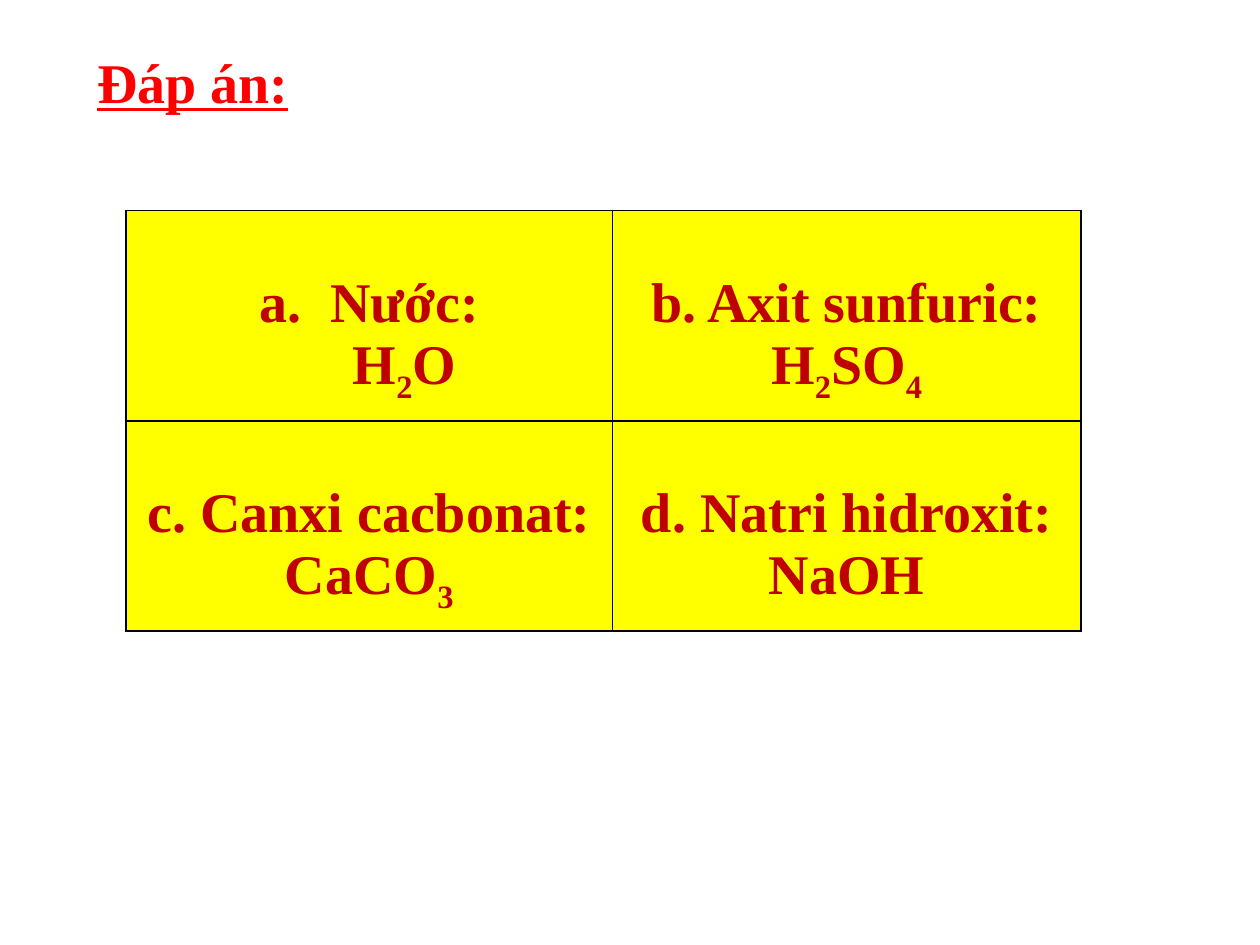
from lxml import etree
from pptx import Presentation
from pptx.dml.color import RGBColor
from pptx.enum import text
from pptx.oxml.ns import qn
from pptx.util import Inches, Pt

COLORS = {"title": "FF0000", "answer": "C00000", "cell": "FFFF00", "border": "000000"}
INDENT = Inches(0.56)

# Each cell lists its paragraphs as (layout, runs); odd runs are subscripts.
ANSWERS = [
    [[("lettered", ["Nước:"]), ("indented", ["H", "2", "O"])],
     [("plain", ["b. Axit sunfuric: H", "2", "SO", "4"])]],
    [[("plain", ["c. Canxi cacbonat: CaCO", "3"])],
     [("plain", ["d. Natri hidroxit: NaOH"])]],
]


def set_all(obj, values):
    for name, value in values.items():
        setattr(obj, name, value)


class AnswerSlide:
    FONT = {"name": "Times New Roman", "size": Pt(32), "bold": True}
    CELL = {"margin_left": Inches(0.07), "margin_right": Inches(0.07),
            "margin_top": Inches(0.49), "margin_bottom": 0,
            "vertical_anchor": text.MSO_ANCHOR.TOP}

    def __init__(self, prs):
        self.slide = prs.slides.add_slide(prs.slide_layouts[5])

    def run(self, p, words, color, **extra):
        r = p.add_run()
        r.text = words
        set_all(r.font, {**self.FONT, **extra})
        r.font.color.rgb = RGBColor.from_string(COLORS[color])
        return r

    def title(self, words, left, top, width, height):
        sp = self.slide.shapes.title
        set_all(sp, {"left": Inches(left), "top": Inches(top),
                     "width": Inches(width), "height": Inches(height)})
        tf = sp.text_frame
        set_all(tf, {"word_wrap": True, "vertical_anchor": text.MSO_ANCHOR.TOP,
                     "auto_size": text.MSO_AUTO_SIZE.SHAPE_TO_FIT_TEXT})
        p = tf.paragraphs[0]
        p.alignment = text.PP_ALIGN.LEFT
        self.run(p, words, "title", underline=True)

    def table(self, rows, left, top, widths, row_height):
        table = self.slide.shapes.add_table(
            len(rows), len(widths), Inches(left), Inches(top),
            Inches(sum(widths)), Inches(row_height * len(rows))).table
        set_all(table, {"first_row": False, "horz_banding": False})
        for column, width in zip(table.columns, widths):
            column.width = Inches(width)
        for i, row in enumerate(rows):
            table.rows[i].height = Inches(row_height)
            for j, paragraphs in enumerate(row):
                self.cell(table.cell(i, j), paragraphs)

    def cell(self, cell, paragraphs):
        set_all(cell, self.CELL)
        self.borders(cell)
        cell.fill.solid()
        cell.fill.fore_color.rgb = RGBColor.from_string(COLORS["cell"])
        tf = cell.text_frame
        for i, (layout, runs) in enumerate(paragraphs):
            p = tf.add_paragraph() if i else tf.paragraphs[0]
            p.alignment = text.PP_ALIGN.CENTER
            self.indent(p, layout)
            for k, words in enumerate(runs):
                r = self.run(p, words, "answer")
                if k % 2:
                    r._r.get_or_add_rPr().set("baseline", "-25000")

    def indent(self, p, layout):
        if layout == "plain":
            return
        pPr = p._p.get_or_add_pPr()
        pPr.set("marL", str(INDENT))
        if layout == "lettered":
            pPr.set("indent", str(-INDENT))
            etree.SubElement(pPr, qn("a:buAutoNum"), type="alphaLcPeriod")

    def borders(self, cell):
        tcPr = cell._tc.get_or_add_tcPr()
        for side in ("lnL", "lnR", "lnT", "lnB"):
            line = etree.SubElement(tcPr, qn(f"a:{side}"), w=str(Pt(1)))
            fill = etree.SubElement(line, qn("a:solidFill"))
            etree.SubElement(fill, qn("a:srgbClr"), val=COLORS["border"])


def main():
    prs = Presentation()
    set_all(prs, {"slide_width": Inches(10), "slide_height": Inches(7.5)})
    s = AnswerSlide(prs)
    s.title("Đáp án:", 0.67, 0.33, 7.33, 0.64)
    s.table(ANSWERS, 1, 1.67, [3.86, 3.72], 1.67)
    prs.save("out.pptx")


if __name__ == "__main__":
    main()
